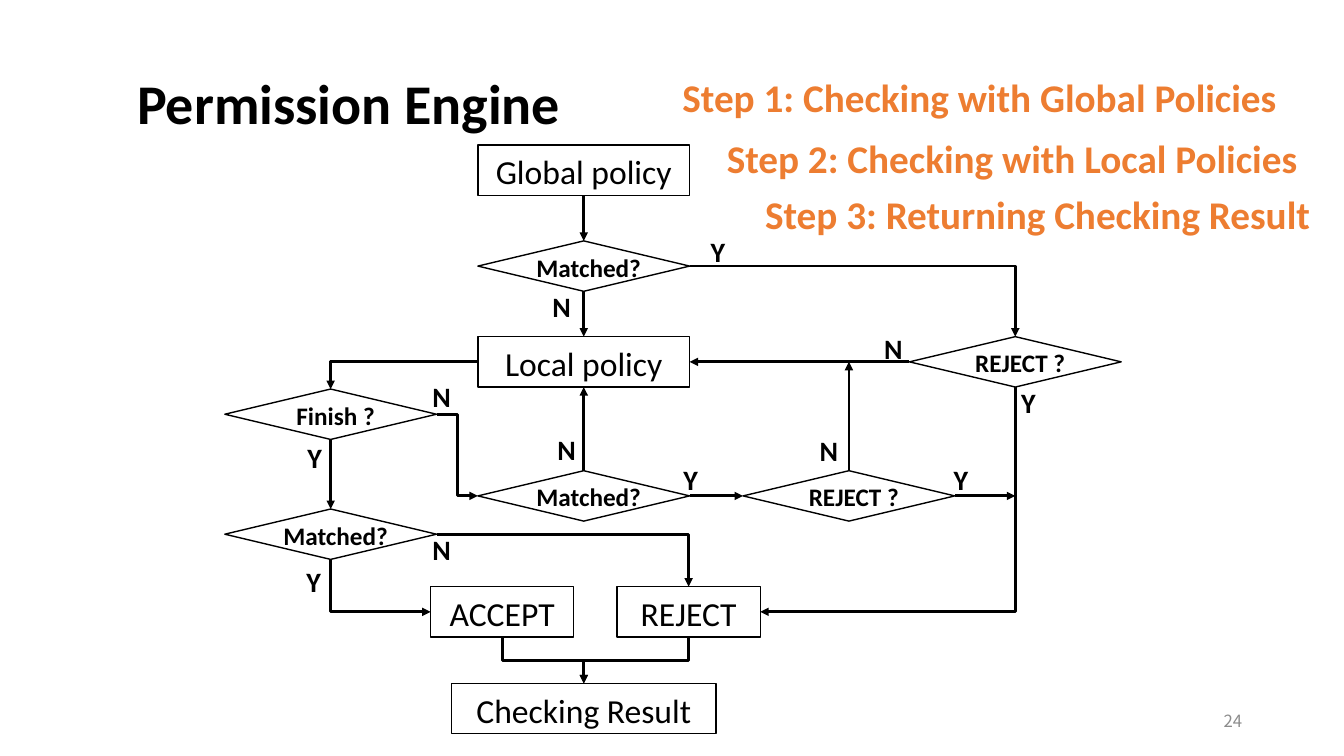
from lxml.etree import SubElement
from pptx import Presentation
from pptx.dml.color import RGBColor
from pptx.enum.shapes import MSO_CONNECTOR, MSO_SHAPE
from pptx.enum.text import MSO_ANCHOR, PP_ALIGN
from pptx.oxml.ns import qn
from pptx.util import Emu, Pt

PX = 9144  # 100 px to the inch
COLORS = {"ink": "000000", "step": "ED7D31", "number": "8C8C8C"}
TOP, LEFT, BOTTOM, RIGHT = range(4)
NODE_HEIGHT = 50

# name: (preset, left, top, width, text), relative to the chart's corner
PROCESS, DECISION = MSO_SHAPE.FLOWCHART_PROCESS, MSO_SHAPE.FLOWCHART_DECISION
NODES = {
    "global": (PROCESS, 251, 0, 210, "Global policy"),
    "global match": (DECISION, 251, 95, 210, "Matched?"),
    "local": (PROCESS, 251, 190, 210, "Local policy"),
    "local match": (DECISION, 251, 323, 210, "Matched?"),
    "local reject": (DECISION, 514, 323, 210, "REJECT ?"),
    "global reject": (DECISION, 679, 190, 210, "REJECT ?"),
    "finish": (DECISION, 0, 242, 210, "Finish ?"),
    "final match": (DECISION, 0, 361, 210, "Matched?"),
    "accept": (PROCESS, 204, 438, 142, "ACCEPT"),
    "reject": (PROCESS, 389, 438, 142, "REJECT"),
    "result": (PROCESS, 225, 534, 262, "Checking Result"),
}
STRAIGHT_ARROWS = [
    ("global", BOTTOM, "global match", TOP),
    ("global match", BOTTOM, "local", TOP),
    ("global reject", LEFT, "local", RIGHT),
    ("local match", RIGHT, "local reject", LEFT),
    ("local match", TOP, "local", BOTTOM),
    ("finish", BOTTOM, "final match", TOP),
]
# arrows that end on another arrow: node, side, end point
JOINING_ARROWS = [
    ("local reject", TOP, 619, 215),
    ("local reject", RIGHT, 784, 348),
]
ELBOW_ARROWS = [
    ("global match", RIGHT, "global reject", TOP, "bentConnector2"),
    ("local", LEFT, "finish", TOP, "bentConnector2"),
    ("global reject", BOTTOM, "reject", RIGHT, "bentConnector2"),
    ("finish", RIGHT, "local match", LEFT, "bentConnector3"),
    ("final match", BOTTOM, "accept", LEFT, "bentConnector2"),
    ("final match", RIGHT, "reject", TOP, "bentConnector2"),
    ("reject", BOTTOM, "result", TOP, "bentConnector3"),
    ("accept", BOTTOM, "result", TOP, "bentConnector3"),
]
ANSWERS = {
    "N": [(315, 138), (644, 180), (320, 280), (580, 281), (196, 228), (196, 379)],
    "Y": [(472, 84), (780, 234), (445, 310), (713, 310), (72, 288), (71, 411)],
}
STEPS = [
    (0, 0, "Step 1: Checking with Global Policies"),
    (44, 60, "Step 2: Checking with Local Policies"),
    (82, 116, "Step 3: Returning Checking Result"),
]


def color(name):
    return RGBColor.from_string(COLORS[name])


def write(shape, text, size, bold=False, ink="ink", font="Calibri",
          align=PP_ALIGN.LEFT, anchor=MSO_ANCHOR.TOP, wrap=False, insets=(10, 5, 10, 5)):
    frame = shape.text_frame
    frame.word_wrap = wrap
    frame.vertical_anchor = anchor
    (frame.margin_left, frame.margin_top,
     frame.margin_right, frame.margin_bottom) = [Emu(inset * PX) for inset in insets]
    paragraph = frame.paragraphs[0]
    paragraph.alignment = align
    run = paragraph.add_run()
    run.text = text
    run.font.size, run.font.bold, run.font.name = Pt(size), bold, font
    run.font.color.rgb = color(ink)


def add_text(slide, left, top, width, height, text, size, **text_format):
    box = slide.shapes.add_textbox(left * PX, top * PX, width * PX, height * PX)
    write(box, text, size, **text_format)


def add_node(slide, preset, left, top, width, text):
    shape = slide.shapes.add_shape(preset, left * PX, top * PX, width * PX, NODE_HEIGHT * PX)
    shape.shadow.inherit = False
    shape.fill.background()
    shape.line.color.rgb = color("ink")
    shape.line.width = Pt(1)
    decision = preset == DECISION
    write(shape, text, 18 if decision else 24, bold=decision, align=PP_ALIGN.CENTER,
          anchor=MSO_ANCHOR.MIDDLE, insets=(10 if decision else 0, 2, 0, 0))
    return shape


def add_arrow(slide, kind, start, side, end=(0, 0)):
    arrow = slide.shapes.add_connector(kind, 0, 0, end[0] * PX, end[1] * PX)
    arrow.begin_connect(start, side)
    arrow.line.color.rgb = color("ink")
    arrow.line.width = Pt(2)
    SubElement(arrow.line._get_or_add_ln(), qn("a:tailEnd"), type="triangle")
    SubElement(arrow._element.spPr, qn("a:effectLst"))
    return arrow


def turn_downward(arrow):
    """Rotate an elbow by a quarter turn so that it leaves its start downward."""
    across = arrow.end_x - arrow.begin_x
    center_x = (arrow.begin_x + arrow.end_x) // 2
    center_y = (arrow.begin_y + arrow.end_y) // 2
    width, height = abs(arrow.end_y - arrow.begin_y), abs(across)
    transform = arrow._element.spPr.find(qn("a:xfrm"))
    transform.attrib.clear()
    transform.set("rot", "5400000" if across < 0 else "16200000")
    if across > 0:
        transform.set("flipH", "1")
    arrow.left, arrow.top = center_x - width // 2, center_y - height // 2
    arrow.width, arrow.height = width, height


def add_flowchart(slide, left, top):
    nodes = {name: add_node(slide, preset, left + x, top + y, width, text)
             for name, (preset, x, y, width, text) in NODES.items()}
    for start, side, end, end_side in STRAIGHT_ARROWS:
        arrow = add_arrow(slide, MSO_CONNECTOR.STRAIGHT, nodes[start], side)
        arrow.end_connect(nodes[end], end_side)
    for start, side, x, y in JOINING_ARROWS:
        add_arrow(slide, MSO_CONNECTOR.STRAIGHT, nodes[start], side, (left + x, top + y))
    for start, side, end, end_side, preset in ELBOW_ARROWS:
        arrow = add_arrow(slide, MSO_CONNECTOR.ELBOW, nodes[start], side)
        arrow.end_connect(nodes[end], end_side)
        arrow._element.spPr.find(qn("a:prstGeom")).set("prst", preset)
        if side == BOTTOM:
            turn_downward(arrow)
    for answer, places in ANSWERS.items():
        for x, y in places:
            add_text(slide, left + x, top + y, 39, 44, answer, 20, bold=True)


def add_steps(slide, left, top):
    for x, y, text in STEPS:
        add_text(slide, left + x, top + y, 645 - x, 57, text, 28,
                 bold=True, ink="step", wrap=True)


def set_title(slide, left, top, width, height):
    title = slide.shapes.title
    title.left, title.top = left * PX, top * PX
    title.width, title.height = width * PX, height * PX
    write(title, "Permission Engine", 40, bold=True)


def main():
    presentation = Presentation()
    presentation.slide_width, presentation.slide_height = 1333 * PX, 750 * PX
    slide = presentation.slides.add_slide(presentation.slide_layouts[5])
    set_title(slide, 126, 63, 445, 77)
    add_flowchart(slide, 223, 144)
    add_steps(slide, 667, 68)
    add_text(slide, 942, 695, 300, 40, "24", 12, ink="number", font="Noto Sans CJK SC",
             align=PP_ALIGN.RIGHT, anchor=MSO_ANCHOR.MIDDLE)
    presentation.save("out.pptx")


if __name__ == "__main__":
    main()
